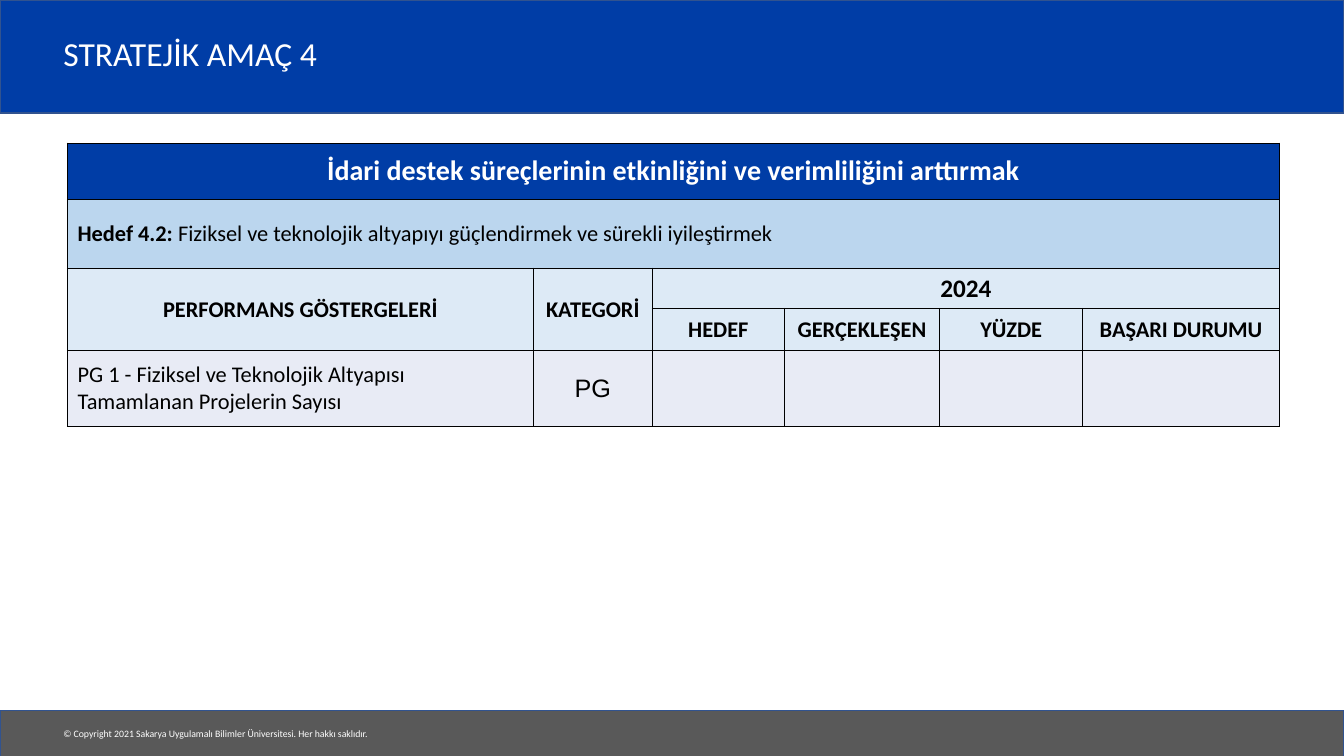
from lxml.etree import SubElement
from pptx import Presentation
from pptx.dml.color import RGBColor
from pptx.enum.shapes import MSO_SHAPE
from pptx.enum.text import MSO_ANCHOR, PP_ALIGN
from pptx.oxml.ns import qn
from pptx.util import Inches, Pt

BLUE, SKY, PALE, LILAC = "003DA6", "BBD6EE", "DDEAF6", "E8EBF5"
WHITE, BLACK, GREY, EDGE = "FFFFFF", "000000", "595959", "31538F"

BANDS = [(0, 1.12, BLUE), (7.05, 0.46, GREY)]
LABELS = [
    ("© Copyright 2021 Sakarya Uygulamalı Bilimler Üniversitesi. Her hakkı saklıdır.",
     (0.53, 7.17, 3.29, 0.22), 7, MSO_ANCHOR.TOP, 1.0),
    ("STRATEJİK AMAÇ 4", (0.53, 0.19, 11.03, 0.73), 24, MSO_ANCHOR.MIDDLE, 0.9),
]

COLUMNS = [4.62, 1.18, 1.31, 1.54, 1.42, 1.95]
ROWS = [0.56, 0.68, 0.4, 0.42, 0.75]
ROW_FILLS = [BLUE, SKY, PALE, PALE, LILAC]
MERGES = [(0, 0, 0, 5), (1, 0, 1, 5), (2, 0, 3, 0), (2, 1, 3, 1), (2, 2, 2, 5)]
LEFT, CENTER = PP_ALIGN.LEFT, PP_ALIGN.CENTER
BOLD, PLAIN = True, False
CELLS = [
    (0, 0, [("İdari destek süreçlerinin etkinliğini ve verimliliğini arttırmak", BOLD)],
     20, "Calibri", WHITE, CENTER),
    (1, 0, [("Hedef 4.2: ", BOLD),
            ("Fiziksel ve teknolojik altyapıyı güçlendirmek ve sürekli iyileştirmek", PLAIN)],
     16, "Calibri", BLACK, LEFT),
    (2, 0, [("PERFORMANS GÖSTERGELERİ", BOLD)], 16, "Calibri", BLACK, CENTER),
    (2, 1, [("KATEGORİ", BOLD)], 16, "Calibri", BLACK, CENTER),
    (2, 2, [("2024", BOLD)], 18, "Calibri", BLACK, CENTER),
    (3, 2, [("HEDEF", BOLD)], 16, "Calibri", BLACK, CENTER),
    (3, 3, [("GERÇEKLEŞEN", BOLD)], 16, "Calibri", BLACK, CENTER),
    (3, 4, [("YÜZDE", BOLD)], 16, "Calibri", BLACK, CENTER),
    (3, 5, [("BAŞARI DURUMU", BOLD)], 16, "Calibri", BLACK, CENTER),
    (4, 0, [("PG 1 - Fiziksel ve Teknolojik Altyapısı Tamamlanan Projelerin Sayısı", PLAIN)],
     16, "Calibri", BLACK, LEFT),
    (4, 1, [("PG", PLAIN)], 18, "Arial", BLACK, CENTER),
]


def paint(target, color):
    target.solid()
    target.fore_color.rgb = RGBColor.from_string(color)


def set_font(font, size, name, color):
    font.size, font.name = Pt(size), name
    paint(font.fill, color)


def add_band(page, top, height, color):
    band = page.shapes.add_shape(
        MSO_SHAPE.RECTANGLE, 0, Inches(top), Inches(13.33), Inches(height))
    band.shadow.inherit = False
    paint(band.fill, color)
    paint(band.line.fill, EDGE)
    band.line.width = Pt(1)


def add_label(page, text, place, size, anchor, spacing):
    frame = page.shapes.add_textbox(*map(Inches, place)).text_frame
    frame.word_wrap = True
    frame.vertical_anchor = anchor
    para = frame.paragraphs[0]
    para.text = text
    para.line_spacing = spacing
    set_font(para.font, size, "Calibri", WHITE)


def add_borders(cell):
    properties = cell._tc.get_or_add_tcPr()
    for side in ("a:lnL", "a:lnR", "a:lnT", "a:lnB"):
        line = SubElement(properties, qn(side), w=str(Pt(1)))
        fill = SubElement(line, qn("a:solidFill"))
        SubElement(fill, qn("a:srgbClr"), val=BLACK)


def add_goal_table(page):
    table = page.shapes.add_table(
        len(ROWS), len(COLUMNS), Inches(0.67), Inches(1.42),
        Inches(sum(COLUMNS)), Inches(sum(ROWS))).table
    for column, width in zip(table.columns, COLUMNS):
        column.width = Inches(width)
    for row, height, color in zip(table.rows, ROWS, ROW_FILLS):
        row.height = Inches(height)
        for cell in row.cells:
            add_borders(cell)
            paint(cell.fill, color)
            cell.vertical_anchor = MSO_ANCHOR.MIDDLE
    for top, left, bottom, right in MERGES:
        table.cell(top, left).merge(table.cell(bottom, right))
    for row, column, spans, size, name, color, alignment in CELLS:
        para = table.cell(row, column).text_frame.paragraphs[0]
        para.alignment = alignment
        set_font(para.font, size, name, color)
        for text, bold in spans:
            span = para.add_run()
            span.text = text
            set_font(span.font, size, name, color)
            span.font.bold = bold


def main():
    deck = Presentation()
    deck.slide_width, deck.slide_height = Inches(13.33), Inches(7.5)
    page = deck.slides.add_slide(deck.slide_layouts[6])
    for band in BANDS:
        add_band(page, *band)
    for label in LABELS:
        add_label(page, *label)
    add_goal_table(page)
    deck.save("out.pptx")


if __name__ == "__main__":
    main()
